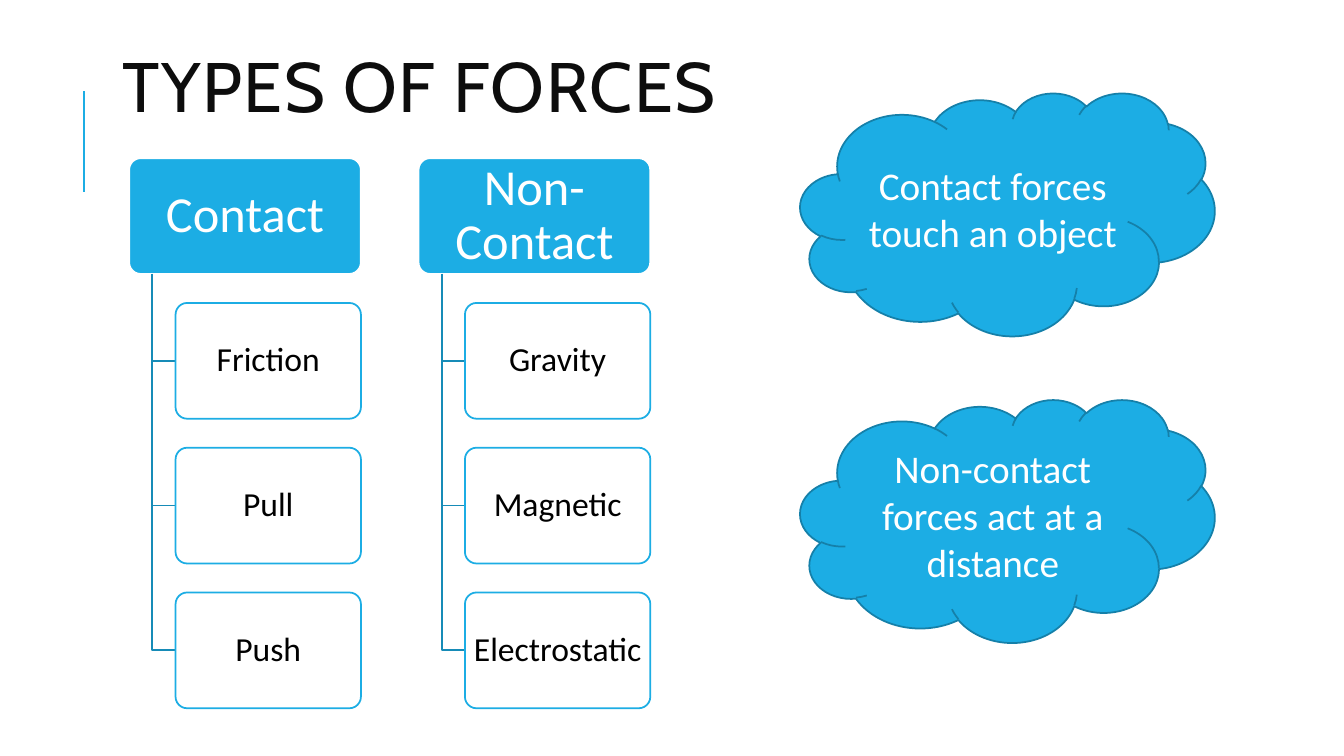
import pptx
import pptx.util
import pptx.dml.color
import pptx.enum.shapes
import pptx.enum.text
import pptx.oxml.ns
import lxml.etree

Pt = pptx.util.Pt
SHAPE = pptx.enum.shapes.MSO_SHAPE
ALIGN = pptx.enum.text.PP_ALIGN
ANCHOR = pptx.enum.text.MSO_ANCHOR
qn = pptx.oxml.ns.qn
BLUE, DARK_BLUE, WHITE = "1CADE4", "168BB7", "FFFFFF"


def rgb(color):
    return pptx.dml.color.RGBColor.from_string(color)


def add_box(kind, box, text, fill, line, color, size, margin, spacing):
    sp = slide.shapes.add_shape(kind, *map(Pt, box))
    sp.shadow.inherit = False
    sp.fill.solid()
    sp.fill.fore_color.rgb = rgb(fill)
    sp.line.color.rgb = rgb(line)
    sp.line.width = Pt(1.25)
    tf = sp.text_frame
    frame = {"word_wrap": True, "vertical_anchor": ANCHOR.MIDDLE,
             "margin_left": Pt(margin), "margin_right": Pt(margin),
             "margin_top": Pt(3.6), "margin_bottom": Pt(3.6)}
    for name, value in frame.items():
        setattr(tf, name, value)
    p = tf.paragraphs[0]
    p.alignment = ALIGN.CENTER
    p.line_spacing = spacing
    r = p.add_run()
    r.text = text
    for name, value in {"name": "Calibri", "size": Pt(size)}.items():
        setattr(r.font, name, value)
    r.font.color.rgb = rgb(color)
    return sp


prs = pptx.Presentation()
prs.slide_width, prs.slide_height = Pt(960), Pt(540)
slide = prs.slides.add_slide(prs.slide_layouts[5])

# Accent line beside the title
accent = slide.shapes.add_connector(
    pptx.enum.shapes.MSO_CONNECTOR.STRAIGHT, Pt(60), Pt(137), Pt(60), Pt(65))
accent.line.color.rgb = rgb(BLUE)
accent.line.width = Pt(1.5)
lxml.etree.SubElement(accent._element.spPr, qn("a:effectLst"))

# Title
title = slide.shapes.title
place = {"left": Pt(80.6), "top": Pt(7.2), "width": Pt(765.4), "height": Pt(118)}
for name, value in place.items():
    setattr(title, name, value)
tf = title.text_frame
tf.auto_size = pptx.enum.text.MSO_AUTO_SIZE.NONE
tf.vertical_anchor = ANCHOR.MIDDLE
p = tf.paragraphs[0]
p.alignment = ALIGN.LEFT
p.line_spacing = 0.8
r = p.add_run()
r.text = "TYPES OF FORCES"
for name, value in {"name": "Cabin", "size": Pt(50)}.items():
    setattr(r.font, name, value)
r.font.color.rgb = rgb("0D0D0D")
r.font._element.set("spc", "100")

# Hierarchy: a header per column, with its forces hanging below
columns = {"Contact": ["Friction", "Pull", "Push"],
           "Non-Contact": ["Gravity", "Magnetic", "Electrostatic"]}
top, header_w, box_h = 113, 165.5, 82.7
indent, row_step, column_step = 33.1, 103.4, 206.7
for col, (header, forces) in enumerate(columns.items()):
    left = 92.3 + col * column_step
    sp = add_box(SHAPE.ROUNDED_RECTANGLE, (left, top, header_w, box_h),
                 header, BLUE, WHITE, WHITE, 36, 5, 0.9)
    sp.adjustments[0] = 0.1
    for row, force in enumerate(forces, 1):
        y = top + row * row_step
        trunk, middle = Pt(left + indent / 2), Pt(y + box_h / 2)
        fb = slide.shapes.build_freeform(trunk, Pt(top + box_h))
        fb.add_line_segments(
            [(trunk, middle), (Pt(left + indent), middle)], close=False)
        elbow = fb.convert_to_shape()
        elbow.shadow.inherit = False
        elbow.fill.background()
        elbow.line.color.rgb = rgb(DARK_BLUE)
        elbow.line.width = Pt(1.25)
        sp = add_box(SHAPE.ROUNDED_RECTANGLE,
                     (left + indent, y, header_w - indent, box_h),
                     force, WHITE, BLUE, "000000", 24, 3, 0.9)
        sp.adjustments[0] = 0.1
        fill = sp._element.spPr.find(qn("a:solidFill"))
        lxml.etree.SubElement(fill[0], qn("a:alpha"), val="90000")

# Clouds with the definitions
definitions = ["Contact forces touch an object",
               "Non-contact forces act at a distance"]
for i, definition in enumerate(definitions):
    add_box(SHAPE.CLOUD, (571.7, 66.2 + i * 219, 296, 173.5),
            definition, BLUE, "1580A9", WHITE, 28, 7.2, 1.0)

prs.save("out.pptx")
